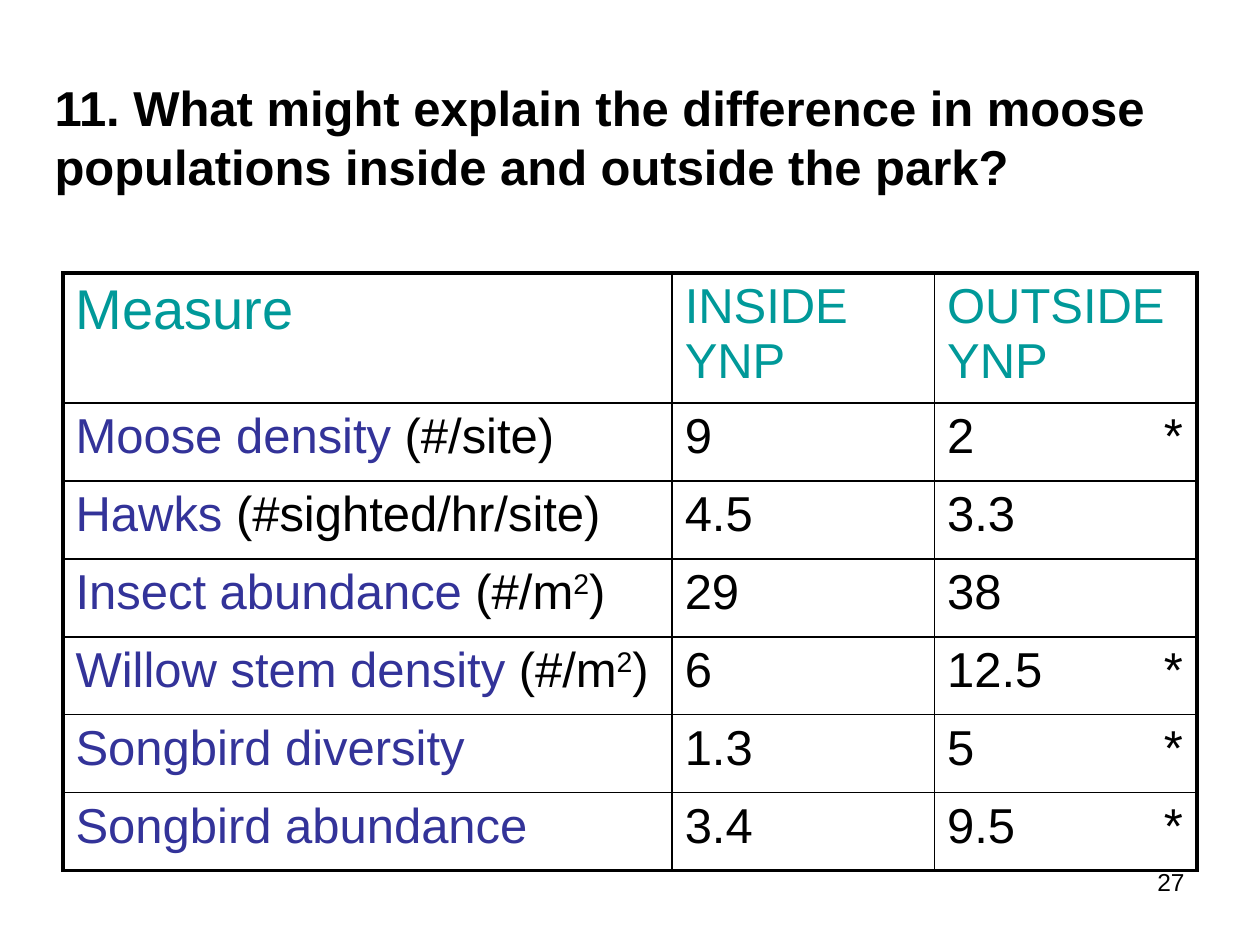
"""Build the slide comparing measures inside and outside the park."""
from lxml.etree import fromstring
from pptx import Presentation
from pptx.dml.color import RGBColor
from pptx.enum.text import MSO_ANCHOR, PP_ALIGN
from pptx.oxml import parse_xml
from pptx.util import Cm, Pt

NS = 'xmlns:a="http://schemas.openxmlformats.org/drawingml/2006/main"'
FONT = "Arial"
COLORS = {"text": "000000", "header": "009999", "measure": "333399"}
TITLE = ("11. What might explain the difference in moose populations "
         "inside and outside the park?")
PAGE = "27"
HEADERS = [("Measure", 32), ("INSIDE YNP", 28), ("OUTSIDE YNP", 28)]
ROWS = [
    ("Moose density", " (#/site)", "", "9", "2", True),
    ("Hawks", " (#sighted/hr/site)", "", "4.5", "3.3", False),
    ("Insect abundance", " (#/m", "2", "29", "38", False),
    ("Willow stem density", " (#/m", "2", "6", "12.5", True),
    ("Songbird diversity", "", "", "1.3", "5", True),
    ("Songbird abundance", "", "", "3.4", "9.5", True),
]
COL_WIDTHS = [12.28, 5.29, 5.29]
HEADER_HEIGHT, ROW_HEIGHT = 2.62, 1.57
THIN, THICK = 1, 2.25
STAR_TAB = 4.75


def add_run(p, text, size=28, color="text", bold=False, baseline=0):
    r = p.add_run()
    r.text = text
    r.font.name = FONT
    r.font.size = Pt(size)
    r.font.bold = bold
    r.font.color.rgb = RGBColor.from_string(COLORS[color])
    if baseline:
        r.font._element.set("baseline", str(baseline * 1000))


def add_text(s, box, text, size, bold=False, align=PP_ALIGN.LEFT, anchor=MSO_ANCHOR.TOP):
    tf = s.shapes.add_textbox(*map(Cm, box)).text_frame
    tf.word_wrap = True
    tf.vertical_anchor = anchor
    p = tf.paragraphs[0]
    p.alignment = align
    add_run(p, text, size, bold=bold)


def set_borders(cell, widths):
    tc_pr = cell._tc.get_or_add_tcPr()
    for i, (side, width) in enumerate(zip("LRTB", widths)):
        tc_pr.insert(i, parse_xml(
            f'<a:ln{side} {NS} w="{Pt(width)}"><a:solidFill>'
            f'<a:srgbClr val="{COLORS["text"]}"/></a:solidFill></a:ln{side}>'))


def add_star(p):
    add_run(p, "\t*")
    p._p.get_or_add_pPr().append(parse_xml(
        f'<a:tabLst {NS}><a:tab pos="{Cm(STAR_TAB)}" algn="r"/></a:tabLst>'))


def add_measures(s):
    n_rows, n_cols = len(ROWS) + 1, len(HEADERS)
    heights = [HEADER_HEIGHT] + [ROW_HEIGHT] * len(ROWS)
    table = s.shapes.add_table(n_rows, n_cols, Cm(1.27), Cm(5.5),
                               Cm(sum(COL_WIDTHS)), Cm(sum(heights))).table
    table.first_row = table.horz_banding = False
    for col, width in zip(table.columns, COL_WIDTHS):
        col.width = Cm(width)
    for row, height in zip(table.rows, heights):
        row.height = Cm(height)
    for i in range(n_rows):
        for j in range(n_cols):
            cell = table.cell(i, j)
            cell.fill.background()
            edges = (j == 0, j == n_cols - 1, i == 0, i == n_rows - 1)
            set_borders(cell, [THICK if edge else THIN for edge in edges])
    for j, (text, size) in enumerate(HEADERS):
        add_run(table.cell(0, j).text_frame.paragraphs[0], text, size, "header")
    for i, (name, unit, power, inside, outside, starred) in enumerate(ROWS, 1):
        label, left, right = (table.cell(i, j).text_frame.paragraphs[0]
                              for j in range(n_cols))
        add_run(label, name, color="measure")
        if unit:
            add_run(label, unit)
        if power:
            add_run(label, power, baseline=30)
            add_run(label, ")")
        add_run(left, inside)
        add_run(right, outside)
        if starred:
            add_star(right)


def main():
    prs = Presentation()
    prs.slide_width, prs.slide_height = Cm(25.4), Cm(19.05)
    s = prs.slides.add_slide(prs.slide_layouts[6])
    add_text(s, (0.85, 0.42, 23.7, 4.66), TITLE, 28, bold=True, anchor=MSO_ANCHOR.MIDDLE)
    add_measures(s)
    add_text(s, (18.2, 17.36, 5.93, 1.32), PAGE, 14, align=PP_ALIGN.RIGHT)
    prs.save("out.pptx")


if __name__ == "__main__":
    main()
